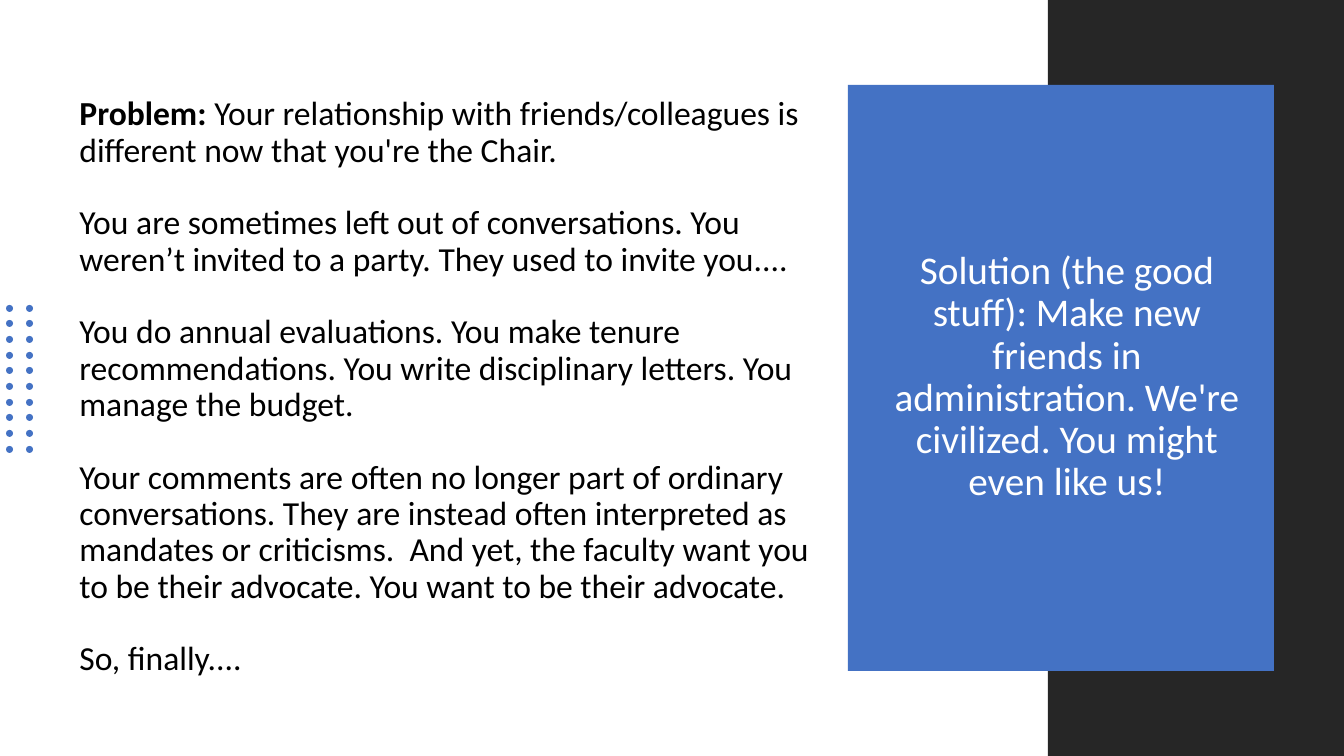
"""Build the slide on how friendships change for a new Chair."""
import pptx
import pptx.dml.color
import pptx.enum.shapes
import pptx.enum.text
import pptx.util
import lxml.etree

PX = 914400 / 134.4
THEME = {
    "font": "Calibri",
    "dark": "262626",
    "accent": "4472C4",
    "text": "000000",
    "light": "FFFFFF",
    "problem_size": 18,
    "solution_size": 21,
    "line_spacing": 0.9,
    "paragraph_gap": 19.5,
}
SHAPE = pptx.enum.shapes.MSO_SHAPE
ALIGN = pptx.enum.text.PP_ALIGN


def add_block(shapes, kind, box, color):
    shape = shapes.add_shape(kind, *[round(length * PX) for length in box])
    shape.shadow.inherit = False
    shape.fill.solid()
    shape.fill.fore_color.rgb = pptx.dml.color.RGBColor.from_string(THEME[color])
    shape.line.fill.background()
    return shape


def format_placeholder(shape, box, size, color, alignment):
    shape.left, shape.top, shape.width, shape.height = [round(length * PX) for length in box]
    frame = shape.text_frame
    frame.word_wrap = True
    frame.auto_size = pptx.enum.text.MSO_AUTO_SIZE.NONE
    frame.vertical_anchor = pptx.enum.text.MSO_ANCHOR.MIDDLE
    for index, paragraph in enumerate(frame.paragraphs):
        paragraph.alignment = alignment
        paragraph.line_spacing = THEME["line_spacing"]
        paragraph.space_before = pptx.util.Pt(THEME["paragraph_gap"] if index else 0)
        for run in paragraph.runs:
            run.font.name = THEME["font"]
            run.font.size = pptx.util.Pt(THEME[size])
            run.font.color.rgb = pptx.dml.color.RGBColor.from_string(THEME[color])


presentation = pptx.Presentation()
presentation.slide_width = round(1344 * PX)
presentation.slide_height = round(756 * PX)
slide = presentation.slides.add_slide(presentation.slide_layouts[1])

problem = slide.shapes.title
problem.text_frame.text = "\n".join([
    "Problem: ",
    "You are sometimes left out of conversations. You weren’t invited to a party. "
    "They used to invite you....",
    "You do annual evaluations. You make tenure recommendations. "
    "You write disciplinary letters. You manage the budget.",
    "Your comments are often no longer part of ordinary conversations. "
    "They are instead often interpreted as mandates or criticisms.  And yet, "
    "the faculty want you to be their advocate. You want to be their advocate.",
    "So, finally....",
])
opening = problem.text_frame.paragraphs[0]
opening.runs[0].font.bold = True
opening.add_run().text = (
    "Your relationship with friends/colleagues is different now that you're the Chair."
)
format_placeholder(problem, (66, 40, 767, 695), "problem_size", "text", ALIGN.LEFT)

add_block(slide.shapes, SHAPE.RECTANGLE, (1048, 0, 296, 756), "dark")
add_block(slide.shapes, SHAPE.RECTANGLE, (848, 85, 426, 586), "accent")

solution = slide.placeholders[1]
solution.text_frame.text = (
    "Solution (the good stuff): Make new friends in administration. "
    "We're civilized. You might even like us!"
)
format_placeholder(solution, (880, 110, 374, 535), "solution_size", "light", ALIGN.CENTER)
properties = solution.text_frame.paragraphs[0]._p.get_or_add_pPr()
properties.set("marL", "0")
properties.set("indent", "0")
lxml.etree.SubElement(properties, pptx.oxml.ns.qn("a:buNone"))
solution.element.getparent().append(solution.element)

dots = slide.shapes.add_group_shape()
for row in range(10):
    for left in (6, 26):
        dot = add_block(dots.shapes, SHAPE.OVAL, (left, 305 + row * 141 // 9, 7, 7), "accent")
        dot.rotation = 90

presentation.save("out.pptx")
